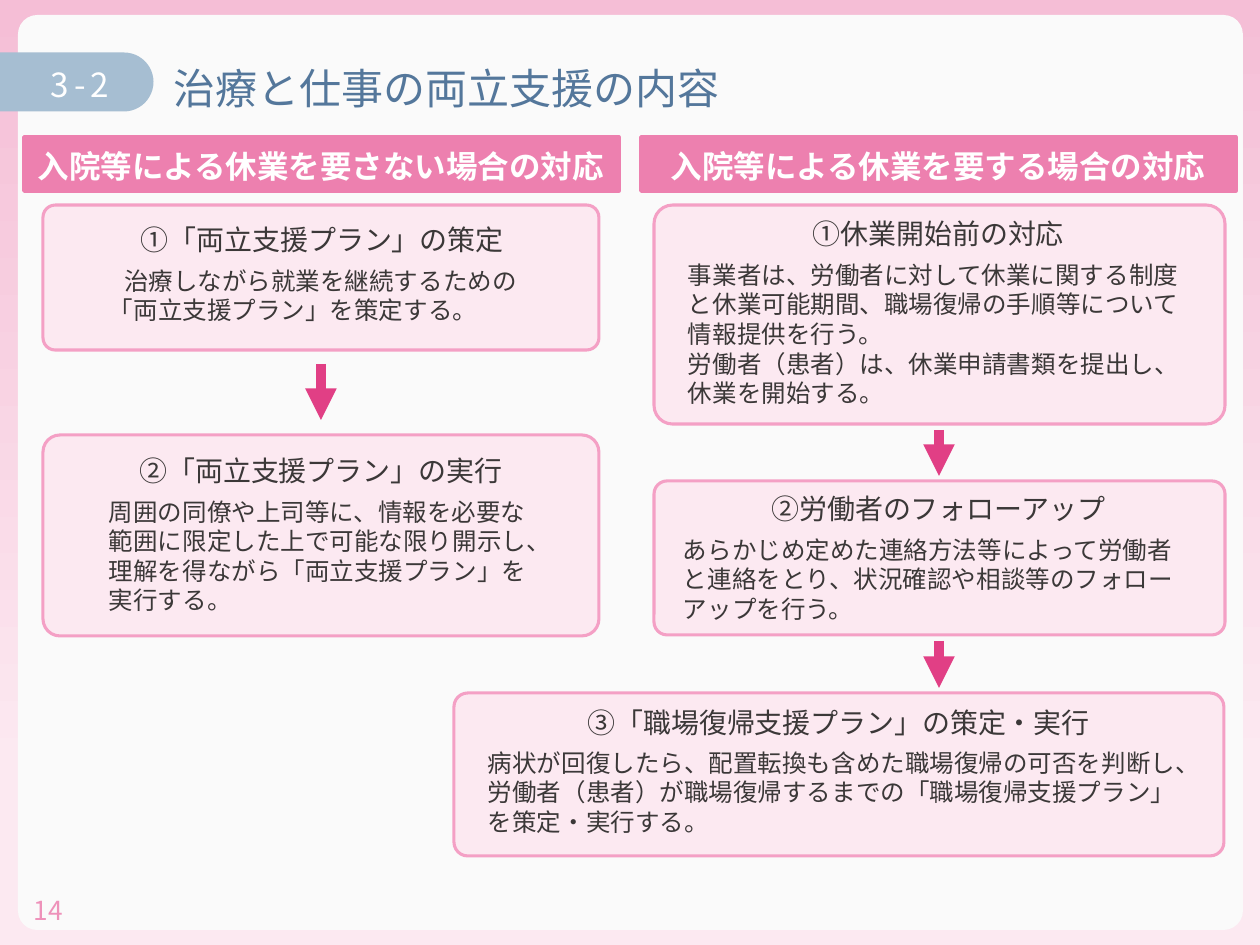
from typing import NamedTuple

import pptx
import pptx.dml.color
import pptx.enum.shapes
import pptx.enum.text
import pptx.oxml
import pptx.oxml.ns
import pptx.util
from lxml import etree

RGB = pptx.dml.color.RGBColor
SHAPE = pptx.enum.shapes.MSO_SHAPE
ALIGN = pptx.enum.text.PP_ALIGN
ANCHOR = pptx.enum.text.MSO_ANCHOR

FONT = "Noto Sans CJK JP"
LINE_HEIGHT = 1.2
EMU_PER_PX = 914400 / 126

PAPER = RGB(0xFA, 0xFA, 0xFA)
WHITE = RGB(0xFF, 0xFF, 0xFF)
INK = RGB(0x3B, 0x38, 0x38)
FRAME_PINK = RGB(0xF5, 0xBE, 0xD6)
PALE_PINK = RGB(0xFC, 0xE9, 0xF1)
BORDER_PINK = RGB(0xF4, 0xA0, 0xC5)
HEADER_PINK = RGB(0xED, 0x80, 0xAF)
ARROW_PINK = RGB(0xE1, 0x3F, 0x85)
NUMBER_PINK = RGB(0xEE, 0x92, 0xBA)
TAB_BLUE = RGB(0xA6, 0xBE, 0xD2)
TITLE_BLUE = RGB(0x54, 0x77, 0x9B)


class Box(NamedTuple):
    x: int
    y: int
    w: int
    h: int


class Label(NamedTuple):
    box: Box
    text: str


class Card(NamedTuple):
    box: Box
    heading: Label
    bodies: list[Label]


class Arrow(NamedTuple):
    x: int
    top: int
    bottom: int


class Style(NamedTuple):
    size: int
    color: RGB
    bold: bool = False
    align: ALIGN = ALIGN.LEFT
    anchor: ANCHOR = ANCHOR.TOP
    insets: tuple = (13, 8, 13, 6)
    tracking: int = 0


HEADING = Style(16, INK, align=ALIGN.CENTER)
BODY = Style(14, INK)
HEADER = Style(18, WHITE, True, ALIGN.CENTER, ANCHOR.MIDDLE, (13, 4, 13, 0))
TITLE = Style(24, TITLE_BLUE, anchor=ANCHOR.MIDDLE, insets=(20, 0, 13, 0))
TAB = Style(19, WHITE, False, ALIGN.CENTER, ANCHOR.MIDDLE, (0, 5, 0, 0), 300)
NUMBER = Style(15, NUMBER_PINK)

CARDS = [
    Card(Box(43, 205, 556, 145),
         Label(Box(76, 215, 493, 47), "①「両立支援プラン」の策定"),
         [Label(Box(111, 258, 421, 33), "治療しながら就業を継続するための"),
          Label(Box(96, 287, 397, 33), "「両立支援プラン」を策定する。")]),
    Card(Box(43, 435, 556, 201),
         Label(Box(76, 446, 490, 47), "②「両立支援プラン」の実行"),
         [Label(Box(96, 489, 452, 131),
                "周囲の同僚や上司等に、情報を必要な範囲に限定した上で可能な限り開示し、"
                "理解を得ながら「両立支援プラン」を実行する。")]),
    Card(Box(654, 205, 571, 219),
         Label(Box(723, 209, 431, 47), "①休業開始前の対応"),
         [Label(Box(675, 252, 528, 102),
                "事業者は、労働者に対して休業に関する制度と休業可能期間、"
                "職場復帰の手順等について情報提供を行う。"),
          Label(Box(675, 341, 528, 72),
                "労働者（患者）は、休業申請書類を提出し、休業を開始する。")]),
    Card(Box(654, 481, 571, 154),
         Label(Box(699, 484, 479, 47), "②労働者のフォローアップ"),
         [Label(Box(670, 527, 538, 102),
                "あらかじめ定めた連絡方法等によって労働者と連絡をとり、"
                "状況確認や相談等のフォローアップを行う。")]),
    Card(Box(454, 693, 770, 163),
         Label(Box(517, 698, 644, 47), "③「職場復帰支援プラン」の策定・実行"),
         [Label(Box(475, 740, 730, 102),
                "病状が回復したら、配置転換も含めた職場復帰の可否を判断し、"
                "労働者（患者）が職場復帰するまでの「職場復帰支援プラン」を策定・実行する。")]),
]
ARROWS = [Arrow(321, 364, 420), Arrow(939, 430, 476), Arrow(939, 641, 688)]
HEADERS = ["入院等による休業を要さない場合の対応", "入院等による休業を要する場合の対応"]
COLUMN_STEP = 617


def px(n: int) -> int:
    return round(n * EMU_PER_PX)


def add_panel(s, kind, box: Box, fill=None, line=None, width=1.0, adj=()):
    sp = s.shapes.add_shape(kind, *map(px, box))
    sp.shadow.inherit = False
    for i, value in enumerate(adj):
        sp.adjustments[i] = value
    if fill is not None:
        sp.fill.solid()
        sp.fill.fore_color.rgb = fill
    if line is None:
        sp.line.fill.background()
    else:
        sp.line.color.rgb = line
        sp.line.width = pptx.util.Pt(width)
    return sp


def add_label(s, label: Label, style: Style) -> None:
    tf = s.shapes.add_textbox(*map(px, label.box)).text_frame
    tf.word_wrap = True
    tf.vertical_anchor = style.anchor
    tf.margin_left, tf.margin_top, tf.margin_right, tf.margin_bottom = map(px, style.insets)
    tf.text = label.text
    p = tf.paragraphs[0]
    p.alignment = style.align
    p.line_spacing = pptx.util.Pt(style.size * LINE_HEIGHT)
    r = p.runs[0]
    r.font.size = pptx.util.Pt(style.size)
    r.font.bold = style.bold
    r.font.color.rgb = style.color
    r.font.name = FONT
    rpr = r._r.get_or_add_rPr()
    etree.SubElement(rpr, pptx.oxml.ns.qn("a:ea")).set("typeface", FONT)
    if style.tracking:
        rpr.set("spc", str(style.tracking))


def add_arrow(s, arrow: Arrow) -> None:
    x = px(arrow.x)
    c = s.shapes.add_connector(
        pptx.enum.shapes.MSO_CONNECTOR.STRAIGHT, x, px(arrow.top), x, px(arrow.bottom))
    c.line.color.rgb = ARROW_PINK
    c.line.width = pptx.util.Pt(6)
    ln = c.line._get_or_add_ln()
    etree.SubElement(ln, pptx.oxml.ns.qn("a:tailEnd")).set("type", "triangle")
    etree.SubElement(c._element.spPr, pptx.oxml.ns.qn("a:effectLst"))


def add_card(s, card: Card) -> None:
    add_panel(s, SHAPE.ROUNDED_RECTANGLE, card.box, PALE_PINK, BORDER_PINK, 1.75, [0.085])
    add_label(s, card.heading, HEADING)
    for body in card.bodies:
        add_label(s, body, BODY)


def add_frame(s) -> None:
    sp = add_panel(s, SHAPE.RECTANGLE, Box(0, 0, 1260, 945))
    sp.fill.gradient()
    sp.fill.gradient_angle = 270
    stops = [(0, FRAME_PINK), (0.82, PALE_PINK)]
    for stop, (position, color) in zip(sp.fill.gradient_stops, stops):
        stop.position = position
        stop.color.rgb = color
    add_panel(s, SHAPE.ROUNDED_RECTANGLE, Box(18, 15, 1225, 915), PAPER, adj=[0.021])


def main() -> None:
    prs = pptx.Presentation()
    prs.slide_width, prs.slide_height = px(1260), px(945)
    s = prs.slides.add_slide(prs.slide_layouts[6])
    s.background.fill.solid()
    s.background.fill.fore_color.rgb = PAPER
    add_frame(s)
    add_label(s, Label(Box(21, 886, 284, 50), "14"), NUMBER)

    tab = add_panel(s, SHAPE.ROUND_2_SAME_RECTANGLE, Box(47, 5, 59, 154), TAB_BLUE, adj=[0.5, 0])
    tab.rotation = 90
    add_label(s, Label(Box(8, 57, 144, 50), "3-2"), TAB)
    add_label(s, Label(Box(154, 53, 1085, 69), "治療と仕事の両立支援の内容"), TITLE)

    for i, text in enumerate(HEADERS):
        x = i * COLUMN_STEP
        add_panel(s, SHAPE.RECTANGLE, Box(24 + x, 137, 595, 54), HEADER_PINK, HEADER_PINK, 2)
        add_label(s, Label(Box(x - 1, 145, 644, 38), text), HEADER)
    for card in CARDS:
        add_card(s, card)
    for arrow in ARROWS:
        add_arrow(s, arrow)
    prs.save("out.pptx")


if __name__ == "__main__":
    main()
